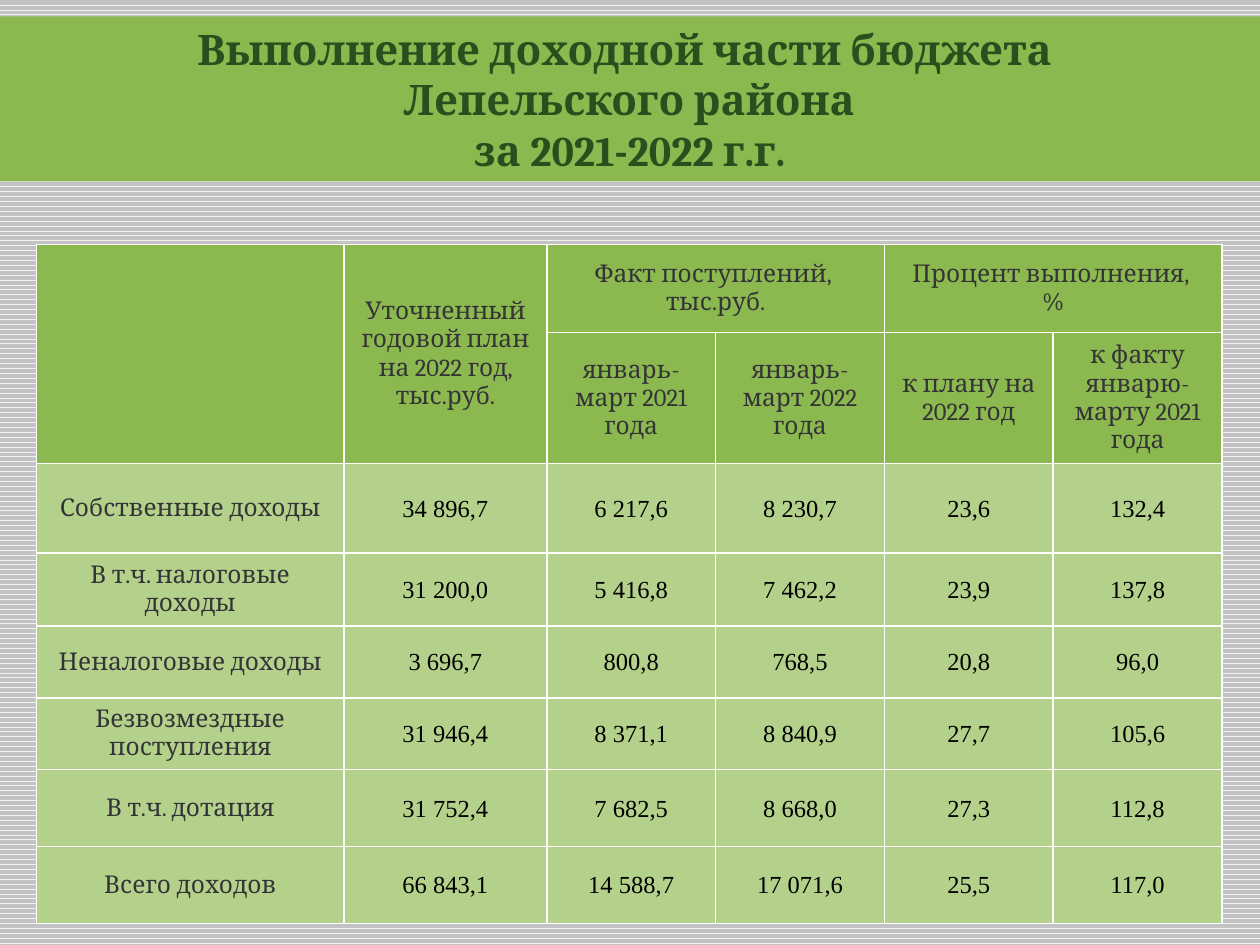
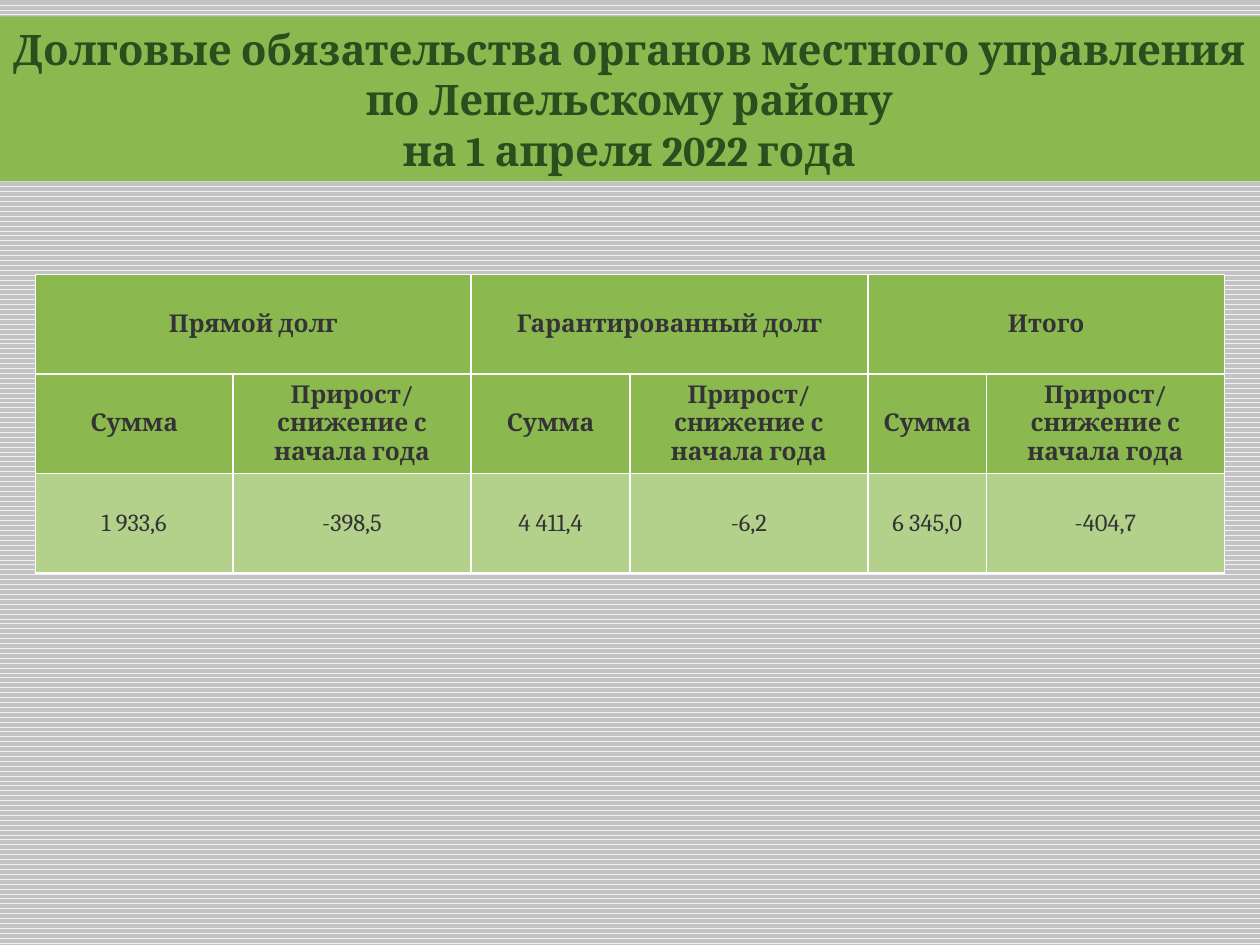
from dataclasses import dataclass

from lxml.etree import SubElement
from pptx import Presentation
from pptx.dml.color import RGBColor as Rgb
from pptx.enum.dml import MSO_PATTERN as Pattern
from pptx.enum.shapes import MSO_SHAPE as Form
from pptx.enum.text import MSO_ANCHOR as Anchor, PP_ALIGN as Align
from pptx.oxml.ns import qn
from pptx.presentation import Presentation as Deck
from pptx.slide import Slide
from pptx.table import _Cell as Cell
from pptx.text.text import TextFrame as Frame
from pptx.util import Inches, Pt


@dataclass(frozen=True)
class Theme:
    stripe: str = "F2F2F2"
    back: str = "C3C2C5"
    band: str = "8CB94F"
    body: str = "B3D18B"
    title: str = "284F1D"
    text: str = "343436"
    number: str = "000000"
    border: str = "FFFFFF"
    serif: str = "Cambria"
    times: str = "Times New Roman"
    large: int = 24
    small: int = 14
    line: int = 1


@dataclass(frozen=True)
class Style:
    size: int
    face: str
    color: str
    bold: bool = False


@dataclass(frozen=True)
class Span:
    row: int
    col: int
    high: int
    wide: int


@dataclass(frozen=True)
class Grid:
    left: float
    top: float
    cols: list[float]
    rows: list[float]
    cells: list[list[str]]
    spans: list[Span]
    head: Style
    label: Style
    number: Style
    inset: float | None = None


THEME = Theme()
TITLE = Style(THEME.large, THEME.serif, THEME.title, True)
PLAIN = Style(THEME.small, THEME.serif, THEME.text)
STRONG = Style(THEME.small, THEME.serif, THEME.text, True)
FIGURE = Style(THEME.small, THEME.times, THEME.number)
HEADS = 2

INCOME = Grid(
    left=0.29,
    top=1.94,
    cols=[2.44, 1.61] + [1.34] * 4,
    rows=[0.7, 1.04, 0.71, 0.58, 0.57, 0.57, 0.61, 0.61],
    cells=[
        ["", "Уточненный годовой план на 2022 год, тыс.руб.",
         "Факт поступлений, \nтыс.руб.", "", "Процент выполнения, \n%", ""],
        ["", "", "январь-март 2021 года", "январь-март 2022 года",
         "к плану на 2022 год", "к факту январю-марту 2021 года"],
        ["Собственные доходы", "34 896,7", "6 217,6", "8 230,7", "23,6", "132,4"],
        ["В т.ч. налоговые доходы", "31 200,0", "5 416,8", "7 462,2", "23,9", "137,8"],
        ["Неналоговые доходы", "3 696,7", "800,8", "768,5", "20,8", "96,0"],
        ["Безвозмездные поступления", "31 946,4", "8 371,1", "8 840,9", "27,7", "105,6"],
        ["В т.ч. дотация", "31 752,4", "7 682,5", "8 668,0", "27,3", "112,8"],
        ["Всего доходов", "66 843,1", "14 588,7", "17 071,6", "25,5", "117,0"],
    ],
    spans=[Span(0, 0, 2, 1), Span(0, 1, 2, 1), Span(0, 2, 1, 2), Span(0, 4, 1, 2)],
    head=PLAIN,
    label=PLAIN,
    number=FIGURE,
    inset=0.01,
)

DEBT = Grid(
    left=0.28,
    top=2.18,
    cols=[1.57, 1.89, 1.26, 1.89, 0.94, 1.89],
    rows=[0.79] * 3,
    cells=[
        ["Прямой долг", "", "Гарантированный долг", "", "Итого", ""],
        ["Сумма", "Прирост/снижение с начала года"] * 3,
        ["1 933,6", "-398,5", "4 411,4", "-6,2", "6 345,0", "-404,7"],
    ],
    spans=[Span(0, col, 1, 2) for col in (0, 2, 4)],
    head=STRONG,
    label=PLAIN,
    number=PLAIN,
)

PAGES = [
    ("Выполнение доходной части бюджета \nЛепельского района\nза 2021-2022 г.г.", INCOME),
    ("Долговые обязательства органов местного управления \n"
     "по Лепельскому району\nна 1 апреля 2022 года", DEBT),
]


def write(frame: Frame, text: str, style: Style) -> None:
    frame.word_wrap = True
    for index, line in enumerate(text.split("\n")):
        para = frame.add_paragraph() if index else frame.paragraphs[0]
        para.alignment = Align.CENTER
        run = para.add_run()
        run.text = line
        font = run.font
        font.size, font.name, font.bold = Pt(style.size), style.face, style.bold
        font.color.rgb = Rgb.from_string(style.color)


def add_page(deck: Deck) -> Slide:
    slide = deck.slides.add_slide(deck.slide_layouts[6])
    fill = slide.background.fill
    fill.patterned()
    fill.pattern = Pattern.WAVE
    fill.fore_color.rgb = Rgb.from_string(THEME.stripe)
    fill.back_color.rgb = Rgb.from_string(THEME.back)
    return slide


def add_title(slide: Slide, text: str) -> None:
    band = slide.shapes.add_shape(
        Form.RECTANGLE, Inches(-0.01), Inches(0.13), Inches(10.01), Inches(1.31))
    band.shadow.inherit = False
    band.fill.solid()
    band.fill.fore_color.rgb = Rgb.from_string(THEME.band)
    band.line.fill.background()
    write(band.text_frame, text, TITLE)


def paint(cell: Cell, color: str) -> None:
    props = cell._tc.get_or_add_tcPr()
    for side in ("lnL", "lnR", "lnT", "lnB"):
        line = SubElement(props, qn(f"a:{side}"), w=str(Pt(THEME.line)))
        fill = SubElement(line, qn("a:solidFill"))
        SubElement(fill, qn("a:srgbClr"), val=THEME.border)
    cell.fill.solid()
    cell.fill.fore_color.rgb = Rgb.from_string(color)
    cell.vertical_anchor = Anchor.MIDDLE


def add_grid(slide: Slide, grid: Grid) -> None:
    table = slide.shapes.add_table(
        len(grid.rows), len(grid.cols), Inches(grid.left), Inches(grid.top),
        Inches(sum(grid.cols)), Inches(sum(grid.rows))).table
    table.first_row = table.horz_banding = False
    for col, width in zip(table.columns, grid.cols):
        col.width = Inches(width)
    for row, height in zip(table.rows, grid.rows):
        row.height = Inches(height)
    for span in grid.spans:
        end = table.cell(span.row + span.high - 1, span.col + span.wide - 1)
        table.cell(span.row, span.col).merge(end)
    for r, texts in enumerate(grid.cells):
        for c, text in enumerate(texts):
            cell = table.cell(r, c)
            head = r < HEADS
            paint(cell, THEME.band if head else THEME.body)
            if not head and c and grid.inset is not None:
                cell.margin_left = cell.margin_right = Inches(grid.inset)
                cell.margin_top, cell.margin_bottom = Inches(grid.inset), 0
            if text:
                style = grid.head if head else grid.number if c else grid.label
                write(cell.text_frame, text, style)


def main() -> None:
    deck = Presentation()
    deck.slide_width, deck.slide_height = Inches(10), Inches(7.5)
    for title, grid in PAGES:
        slide = add_page(deck)
        add_title(slide, title)
        add_grid(slide, grid)
    deck.save("out.pptx")


if __name__ == "__main__":
    main()
